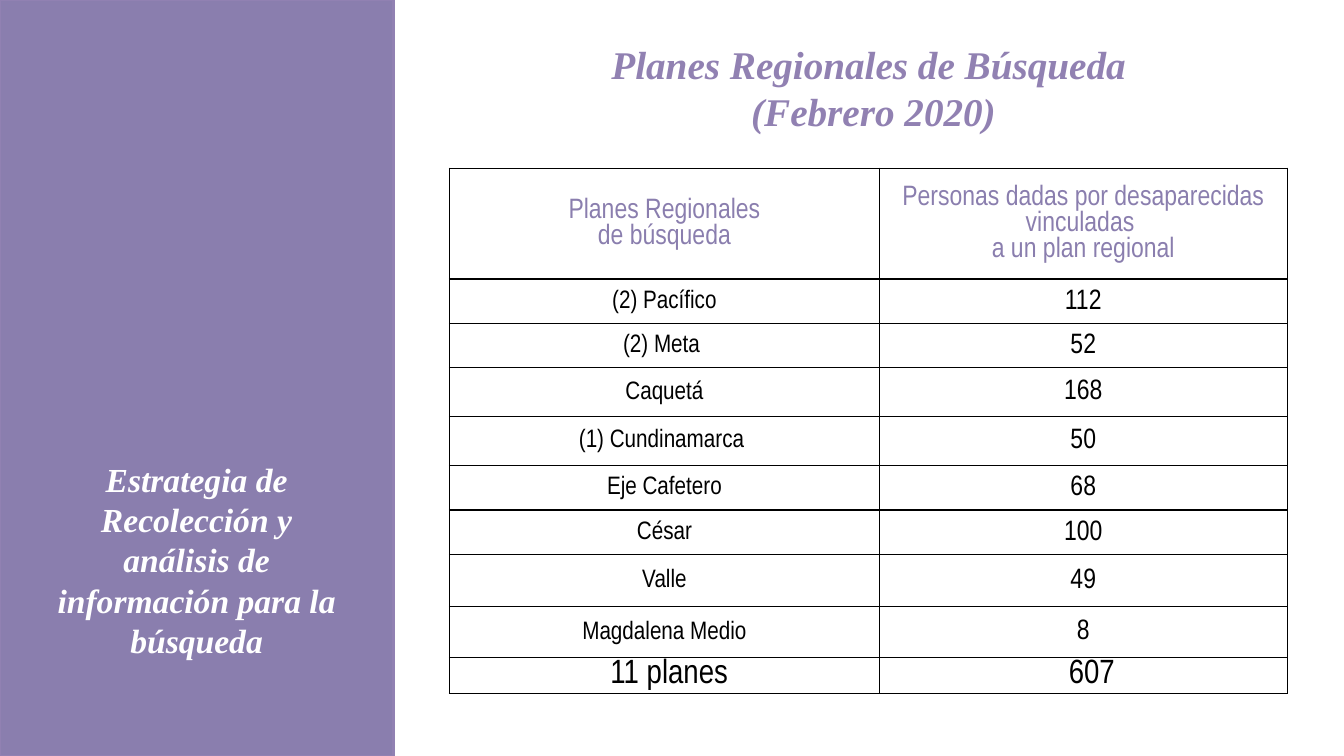
from lxml import etree
from pptx import Presentation
from pptx.dml.color import RGBColor
from pptx.enum.shapes import MSO_SHAPE
from pptx.enum.text import MSO_ANCHOR, PP_ALIGN
from pptx.oxml.ns import qn
from pptx.util import Cm, Pt

RECTANGLE = MSO_SHAPE.RECTANGLE
MIDDLE = MSO_ANCHOR.MIDDLE
CENTER = PP_ALIGN.CENTER

PURPLE = RGBColor(0x8A, 0x7E, 0xAE)
LILAC = RGBColor(0x91, 0x81, 0xB2)
WHITE = RGBColor(0xFF, 0xFF, 0xFF)
BLACK = RGBColor(0x00, 0x00, 0x00)

SERIF = "Times New Roman"
NARROW = "Arial Narrow"

HEADERS = (
    "Planes Regionales\nde búsqueda",
    "Personas dadas por desaparecidas vinculadas \na un plan regional",
)
PLANS = [
    ("(2) Pacífico", "112", 1.12),
    ("(2) Meta ", "52", 1.12),
    ("Caquetá", "168", 1.22),
    ("(1) Cundinamarca ", "50", 1.24),
    ("Eje Cafetero", "68", 1.12),
    ("César", "100", 1.12),
    ("Valle", "49", 1.32),
    ("Magdalena Medio", "8", 1.27),
]
TOTALS = ("11 planes ", "607")
HEADER_HEIGHT = 2.79
TOTAL_HEIGHT = 0.91
COLUMN_SHARES = (0.513, 0.487)


def style_paragraph(paragraph, font_name, size, color, emphasis=False):
    paragraph.alignment = CENTER
    font = paragraph.font
    font.name = font_name
    font.size = Pt(size)
    font.color.rgb = color
    font.bold = font.italic = emphasis


def add_heading(slide, box, text, size, color):
    frame = slide.shapes.add_textbox(*box).text_frame
    frame.word_wrap = True
    frame.vertical_anchor = MIDDLE
    frame.margin_left = frame.margin_right = Cm(0.33)
    frame.margin_top = frame.margin_bottom = Cm(0.18)
    frame.text = text
    for paragraph in frame.paragraphs:
        style_paragraph(paragraph, SERIF, size, color, emphasis=True)


def add_sidebar(slide, left, top, width, height):
    panel = slide.shapes.add_shape(RECTANGLE, left, top, width, height)
    panel.shadow.inherit = False
    panel.fill.solid()
    panel.fill.fore_color.rgb = PURPLE
    panel.line.color.rgb = LILAC
    panel.line.width = Pt(2)
    inset = Cm(0.86)
    box = (left + inset, top + Cm(13.21), width - 2 * inset, Cm(1.78))
    add_heading(
        slide, box,
        "Estrategia de Recolección y análisis de información para la búsqueda",
        24, WHITE)


def add_borders(cell):
    properties = cell._tc.get_or_add_tcPr()
    for position, side in enumerate(("a:lnL", "a:lnR", "a:lnT", "a:lnB")):
        line = etree.Element(qn(side), w=str(Pt(1)))
        fill = etree.SubElement(line, qn("a:solidFill"))
        etree.SubElement(fill, qn("a:srgbClr"), val=str(BLACK))
        properties.insert(position, line)


def fill_cell(cell, text, size, color):
    cell.fill.background()
    cell.vertical_anchor = MIDDLE
    cell.margin_left = cell.margin_right = cell.margin_top = Cm(0.03)
    cell.margin_bottom = 0
    cell.text = text
    for paragraph in cell.text_frame.paragraphs:
        style_paragraph(paragraph, NARROW, size, color)
    add_borders(cell)


def add_plans_table(slide, left, top, width):
    heights = [HEADER_HEIGHT, *(height for _, _, height in PLANS), TOTAL_HEIGHT]
    frame = slide.shapes.add_table(
        len(heights), len(HEADERS), left, top, width, Cm(sum(heights)))
    table = frame.table
    table.first_row = table.horz_banding = False
    for column, share in zip(table.columns, COLUMN_SHARES):
        column.width = int(width * share)
    for row, height in zip(table.rows, heights):
        row.height = Cm(height)

    last = len(heights) - 1
    for index, header in enumerate(HEADERS):
        fill_cell(table.cell(0, index), header, 20, PURPLE)
    for index, (plan, people, _) in enumerate(PLANS, start=1):
        fill_cell(table.cell(index, 0), plan, 18, BLACK)
        fill_cell(table.cell(index, 1), people, 20, BLACK)
    for index, total in enumerate(TOTALS):
        cell = table.cell(last, index)
        fill_cell(cell, total, 24, BLACK)
        paragraph = cell.text_frame.paragraphs[0]
        paragraph.line_spacing = 0.8
        paragraph._p.get_or_add_pPr().set("marL", str(Cm(0.43)))


def main():
    presentation = Presentation()
    presentation.slide_width = Cm(33.87)
    presentation.slide_height = Cm(19.05)
    slide = presentation.slides.add_slide(presentation.slide_layouts[6])
    add_plans_table(slide, Cm(11.33), Cm(4.24), Cm(21.11))
    add_sidebar(slide, 0, 0, Cm(9.91), presentation.slide_height)
    title_box = (Cm(10.97), Cm(0.89), Cm(21.84), Cm(2.64))
    add_heading(
        slide, title_box,
        "Planes Regionales de Búsqueda\n (Febrero 2020)", 28, LILAC)
    presentation.save("out.pptx")


if __name__ == "__main__":
    main()
